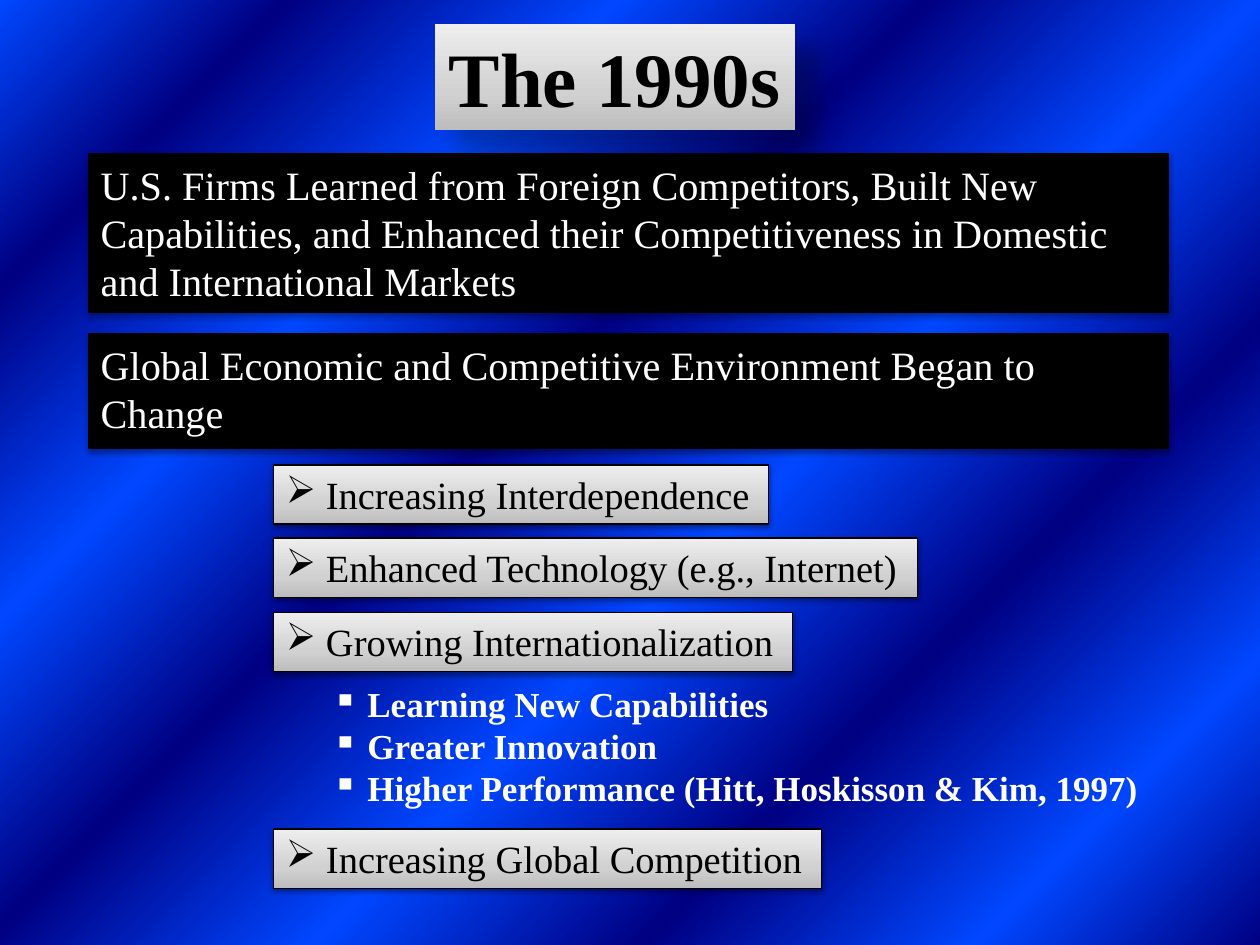
from lxml import etree
from pptx import Presentation
from pptx.dml.color import RGBColor
from pptx.enum.shapes import MSO_SHAPE
from pptx.enum.text import MSO_ANCHOR, PP_ALIGN
from pptx.oxml.ns import qn
from pptx.util import Inches, Pt

RECT = MSO_SHAPE.RECTANGLE
TOP = MSO_ANCHOR.TOP
LEFT, CENTER = PP_ALIGN.LEFT, PP_ALIGN.CENTER

FONT = "Times New Roman"
COLORS = {"black": "000000", "white": "FFFFFF", "navy": "000082", "blue": "0047FF",
          "gray": "BDBDBD", "silver": "D1D1D1", "pale": "EEEEEE"}

WAVE_POSITIONS = [0, 13, 28, 43, 58, 72, 87, 100]
WAVES = [(pos, ("navy", "blue")[i % 2]) for i, pos in enumerate(WAVE_POSITIONS)]
SHEEN = [(0, "gray"), (35, "silver"), (100, "pale")]

TITLE = "The 1990s"
STATEMENTS = [
    ("U.S. Firms Learned from Foreign Competitors, Built New Capabilities, "
     "and Enhanced their Competitiveness in Domestic and International Markets", 1.22, 1.26),
    ("Global Economic and Competitive Environment Began to Change", 2.65, 0.91),
]
TRENDS = [
    ("Increasing Interdependence", 3.69, 3.93),
    ("Enhanced Technology (e.g., Internet)", 4.27, 5.11),
    ("Growing Internationalization", 4.86, 4.12),
    ("Increasing Global Competition", 6.58, 4.35),
]
OUTCOMES = ["Learning New Capabilities", "Greater Innovation",
            "Higher Performance (Hitt, Hoskisson & Kim, 1997)"]


def rgb(name):
    return RGBColor.from_string(COLORS[name])


def add_color(parent, name):
    return etree.SubElement(parent, qn("a:srgbClr"), val=COLORS[name])


def set_gradient(fill, holder, stops, angle):
    fill.solid()
    solid = holder.find(qn("a:solidFill"))
    grad = etree.Element(qn("a:gradFill"), rotWithShape="1")
    stop_list = etree.SubElement(grad, qn("a:gsLst"))
    for pos, color in stops:
        add_color(etree.SubElement(stop_list, qn("a:gs"), pos=str(pos * 1000)), color)
    etree.SubElement(grad, qn("a:lin"), ang=str(angle * 60000), scaled="0")
    holder.replace(solid, grad)


def set_shadow(sp, alpha, blur, dist, angle):
    sp.shadow.inherit = False
    effects = sp._element.spPr.find(qn("a:effectLst"))
    shadow = etree.SubElement(effects, qn("a:outerShdw"), blurRad=str(Pt(blur)),
                              dist=str(Pt(dist)), dir=str(angle * 60000), rotWithShape="0")
    etree.SubElement(add_color(shadow, "black"), qn("a:alpha"), val=str(alpha * 1000))


def write(sp, lines, size, color, bold=False, align=LEFT, bullet=None, wrap=True):
    tf = sp.text_frame
    tf.word_wrap = wrap
    tf.vertical_anchor = TOP
    for i, line in enumerate(lines):
        p = tf.paragraphs[0] if i == 0 else tf.add_paragraph()
        p.text = f" {line}" if bullet else line
        p.alignment = align
        if bullet:
            etree.SubElement(p._p.get_or_add_pPr(), qn("a:buChar"), char=bullet)
        p.font.name, p.font.size, p.font.bold = FONT, Pt(size), bold
        p.font.color.rgb = rgb(color)


def add_box(s, x, y, w, h, shadow, sheen=True, outline=True):
    sp = s.shapes.add_shape(RECT, Inches(x), Inches(y), Inches(w), Inches(h))
    if sheen:
        set_gradient(sp.fill, sp._element.spPr, SHEEN, 270)
    else:
        sp.fill.solid()
        sp.fill.fore_color.rgb = rgb("black")
    if outline:
        sp.line.color.rgb = rgb("black")
        sp.line.width = Pt(0.75)
    else:
        sp.line.fill.background()
    set_shadow(sp, *shadow)
    return sp


prs = Presentation()
prs.slide_width, prs.slide_height = Inches(10), Inches(7.5)
s = prs.slides.add_slide(prs.slide_layouts[6])
bg_fill = s.background.fill
set_gradient(bg_fill, s._element.find(".//" + qn("p:bgPr")), WAVES, 225)

title = add_box(s, 3.45, 0.19, 2.86, 0.84, (30, 15, 18, 45), outline=False)
write(title, [TITLE], 44, "black", bold=True, align=CENTER)

for text, y, h in STATEMENTS:
    sp = add_box(s, 0.7, y, 8.57, h, (35, 3.1, 1.8, 90), sheen=False)
    write(sp, [text], 23, "white")

for text, y, w in TRENDS:
    sp = add_box(s, 2.17, y, w, 0.47, (38, 3.1, 1.6, 90))
    write(sp, [text], 22, "black", bullet="➢", wrap=False)

outcomes = s.shapes.add_textbox(Inches(2.54), Inches(5.37), Inches(6.68), Inches(1.11))
write(outcomes, OUTCOMES, 20, "white", bold=True, bullet="▪", wrap=False)

prs.save("out.pptx")
